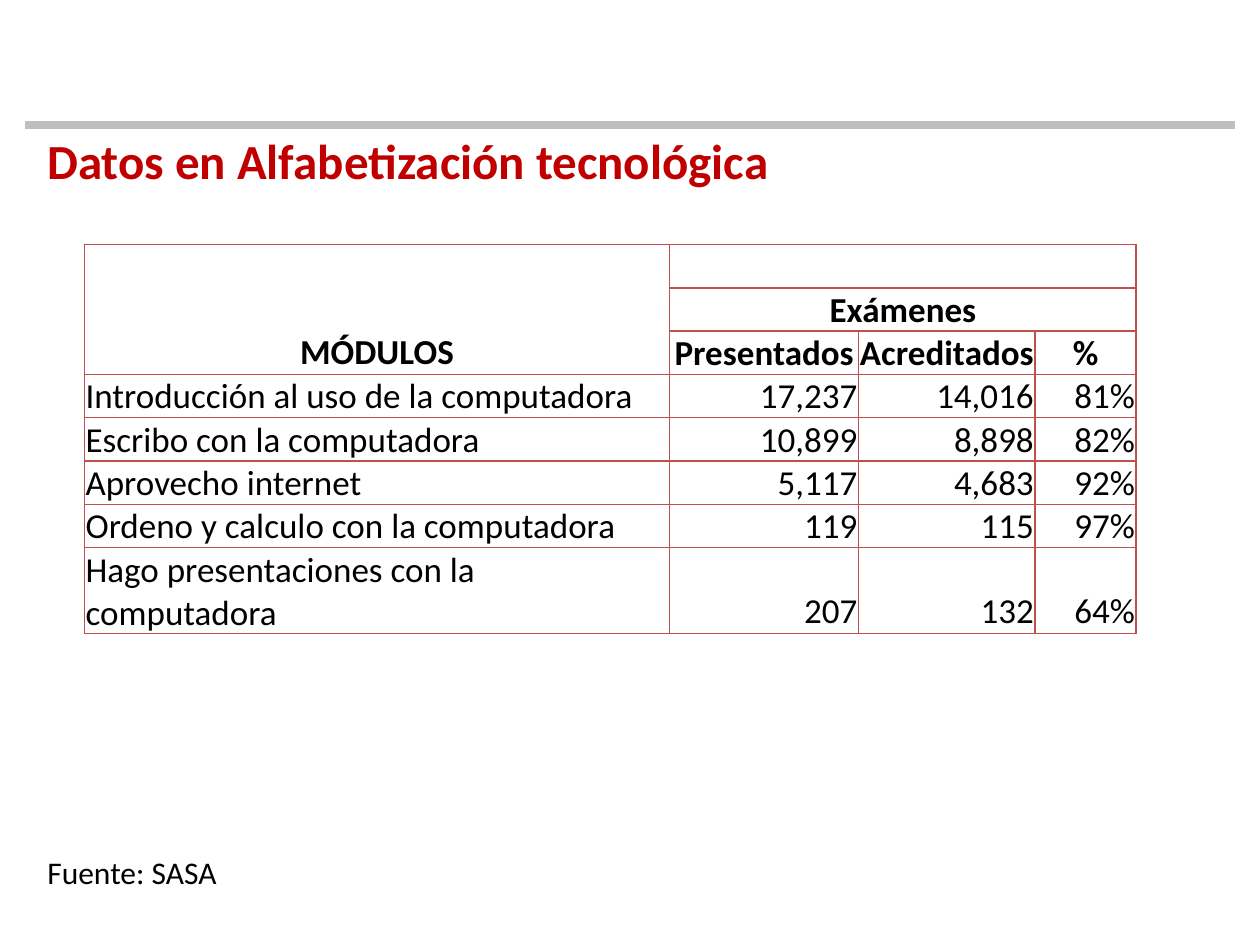
from lxml.etree import SubElement
from pptx import Presentation
from pptx.dml.color import RGBColor
from pptx.enum.shapes import MSO_CONNECTOR
from pptx.enum.text import MSO_ANCHOR, MSO_AUTO_SIZE, PP_ALIGN
from pptx.oxml.ns import qn
from pptx.util import Pt

FONT = "Calibri"
BLACK, RED, BORDER, GREY = "000000", "C00000", "C0504D", "BFBFBF"

COLUMN_WIDTHS = [334.5, 108, 100.8, 57.8]
ROW_HEIGHT = 24.75
HEADER_ROWS = 3
EXAM_ROWS = [
    ["MÓDULOS", "", "", ""],
    ["", "Exámenes", "", ""],
    ["", "Presentados", "Acreditados", "%"],
    ["Introducción al uso de la computadora", "17,237", "14,016", "81%"],
    ["Escribo con la computadora", "10,899", "8,898", "82%"],
    ["Aprovecho internet", "5,117", "4,683", "92%"],
    ["Ordeno y calculo con la computadora", "119", "115", "97%"],
    ["Hago presentaciones con la computadora", "207", "132", "64%"],
]
MERGES = [((0, 0), (2, 0)), ((0, 1), (0, 3)), ((1, 1), (1, 3))]


def rgb(value):
    return RGBColor.from_string(value)


def set_attributes(target, values):
    for name, value in values.items():
        setattr(target, name, value)


def write(paragraph, text, size, color=BLACK, bold=False):
    run = paragraph.add_run()
    run.text = text
    set_attributes(run.font, {"name": FONT, "size": Pt(size), "bold": bold})
    run.font.color.rgb = rgb(color)


def add_label(slide, left, top, width, height, text, size, wrap=True, **style):
    label = slide.shapes.add_textbox(Pt(left), Pt(top), Pt(width), Pt(height))
    set_attributes(label.text_frame, {
        "word_wrap": wrap, "auto_size": MSO_AUTO_SIZE.SHAPE_TO_FIT_TEXT})
    write(label.text_frame.paragraphs[0], text, size, **style)


def add_rule(slide, left, right, y):
    rule = slide.shapes.add_connector(
        MSO_CONNECTOR.STRAIGHT, Pt(left), Pt(y), Pt(right), Pt(y))
    rule.line.width = Pt(4.5)
    rule.line.color.rgb = rgb(GREY)
    SubElement(rule._element.spPr, qn("a:effectLst"))


def add_borders(cell):
    properties = cell._tc.get_or_add_tcPr()
    for side in ("a:lnL", "a:lnR", "a:lnT", "a:lnB"):
        border = SubElement(properties, qn(side), w=str(Pt(1)))
        fill = SubElement(border, qn("a:solidFill"))
        SubElement(fill, qn("a:srgbClr"), val=BORDER)


def format_cell(cell, text, alignment, bold):
    set_attributes(cell, {
        "margin_left": Pt(0.72), "margin_right": Pt(0.72),
        "margin_top": Pt(0.72), "margin_bottom": Pt(0),
        "vertical_anchor": MSO_ANCHOR.BOTTOM})
    add_borders(cell)
    cell.fill.background()
    if text:
        paragraph = cell.text_frame.paragraphs[0]
        paragraph.alignment = alignment
        write(paragraph, text, 20, bold=bold)


def add_exam_table(slide, left, top):
    heights = [ROW_HEIGHT] * (len(EXAM_ROWS) - 1) + [2 * ROW_HEIGHT - 0.5]
    table = slide.shapes.add_table(
        len(heights), len(COLUMN_WIDTHS), Pt(left), Pt(top),
        Pt(sum(COLUMN_WIDTHS)), Pt(sum(heights))).table
    set_attributes(table, {"first_row": False, "horz_banding": False})
    for column, width in zip(table.columns, COLUMN_WIDTHS):
        column.width = Pt(width)
    for row, height in zip(table.rows, heights):
        row.height = Pt(height)
    for start, end in MERGES:
        table.cell(*start).merge(table.cell(*end))
    for r, texts in enumerate(EXAM_ROWS):
        header = r < HEADER_ROWS
        for c, text in enumerate(texts):
            body_alignment = PP_ALIGN.RIGHT if c else PP_ALIGN.LEFT
            alignment = PP_ALIGN.CENTER if header else body_alignment
            format_cell(table.cell(r, c), text, alignment, header)


def main():
    presentation = Presentation()
    set_attributes(presentation, {"slide_width": Pt(720), "slide_height": Pt(540)})
    slide = presentation.slides.add_slide(presentation.slide_layouts[6])
    add_rule(slide, 14.4, 705.6, 71.3)
    add_label(slide, 20, 71.3, 607, 41, "Datos en Alfabetización tecnológica",
              28, color=RED, bold=True)
    add_exam_table(slide, 48.2, 139.7)
    add_label(slide, 20, 483.8, 112.3, 29, "Fuente: SASA", 18, wrap=False)
    presentation.save("out.pptx")


if __name__ == "__main__":
    main()
